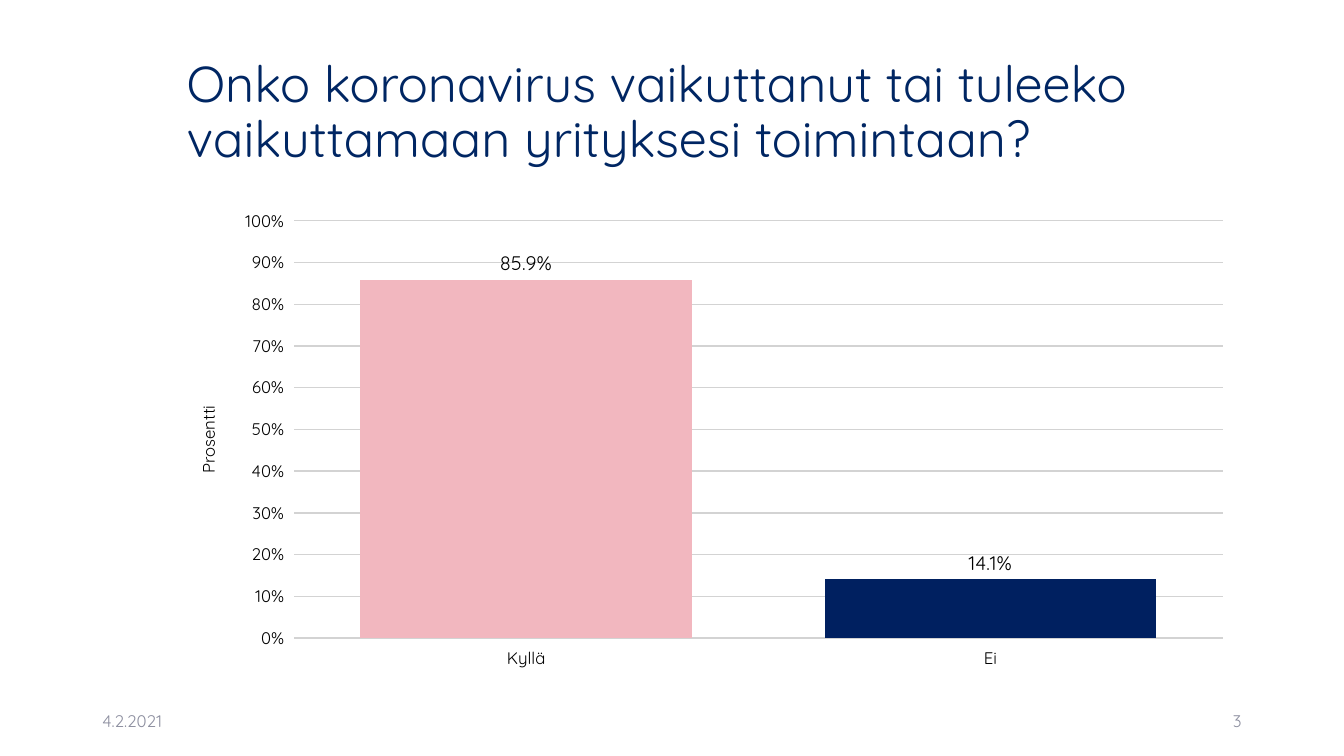
import pptx
import pptx.chart.data
import pptx.dml.color
import pptx.enum.chart
import pptx.enum.text
import pptx.oxml
import pptx.util

Cm = pptx.util.Cm
Color = pptx.dml.color.RGBColor.from_string
Align = pptx.enum.text.PP_ALIGN

theme = {
    "font": "Quicksand",
    "title": "002663", "footer": "8C8E9F", "text": "000000",
    "grid": "D3D3D3", "background": "FFFFFF", "series": "4682B4",
    "bars": ["F2B7BF", "002060"],
    "title_size": 36, "label_size": 14, "small_size": 12, "chart_size": 11,
}


def style_font(font, size, color):
    values = {"name": theme["font"], "size": pptx.util.Pt(size), "bold": False}
    for name, value in values.items():
        setattr(font, name, value)
    font.color.rgb = Color(theme[color])


def fill_box(box, text, size, color, align):
    frame = box.text_frame
    values = {
        "word_wrap": True,
        "auto_size": pptx.enum.text.MSO_AUTO_SIZE.NONE,
        "vertical_anchor": pptx.enum.text.MSO_ANCHOR.MIDDLE,
    }
    for name, value in values.items():
        setattr(frame, name, value)
    para = frame.paragraphs[0]
    para.alignment = align
    span = para.add_run()
    span.text = text
    style_font(span.font, size, color)
    return para


deck = pptx.Presentation()
deck.slide_width, deck.slide_height = Cm(33.87), Cm(19.05)
page = deck.slides.add_slide(deck.slide_layouts[5])
page.background.fill.solid()
page.background.fill.fore_color.rgb = Color(theme["background"])

title = page.shapes.title
title_place = {"left": 4.45, "top": 1.02, "width": 26.9, "height": 3.68}
for name, value in title_place.items():
    setattr(title, name, Cm(value))
title_para = fill_box(
    title,
    "Onko koronavirus vaikuttanut tai tuleeko vaikuttamaan yrityksesi toimintaan?",
    theme["title_size"], "title", Align.LEFT,
)
title_para.line_spacing = 0.9

for text, left, align in [("4.2.2021", 2.33, Align.LEFT), ("3", 23.92, Align.RIGHT)]:
    footer = page.shapes.add_textbox(Cm(left), Cm(17.66), Cm(7.62), Cm(1.01))
    fill_box(footer, text, theme["small_size"], "footer", align)

answers = pptx.chart.data.CategoryChartData()
answers.categories = ["Kyllä", "Ei"]
answers.add_series("Series 1", [0.859, 0.141])
chart = page.shapes.add_chart(
    pptx.enum.chart.XL_CHART_TYPE.COLUMN_CLUSTERED,
    Cm(4.45), Cm(5.08), Cm(26.9), Cm(12.09), answers,
).chart
chart.has_legend = False
chart.has_title = False
style_font(chart.font, theme["chart_size"], "text")

plot = chart.plots[0]
plot.gap_width = 40
plot.vary_by_categories = False
series = plot.series[0]
series.format.fill.solid()
series.format.fill.fore_color.rgb = Color(theme["series"])
for index, color in enumerate(theme["bars"]):
    fill = series.points[index].format.fill
    fill.solid()
    fill.fore_color.rgb = Color(color)

labels = series.data_labels
label_values = {
    "show_value": True,
    "number_format": "0.0%",
    "number_format_is_linked": False,
    "position": pptx.enum.chart.XL_LABEL_POSITION.OUTSIDE_END,
}
for name, value in label_values.items():
    setattr(labels, name, value)
style_font(labels.font, theme["label_size"], "text")

for axis in (chart.category_axis, chart.value_axis):
    axis.major_tick_mark = pptx.enum.chart.XL_TICK_MARK.OUTSIDE
    axis.format.line.fill.background()
    style_font(axis.tick_labels.font, theme["small_size"], "text")

percent_axis = chart.value_axis
axis_values = {
    "minimum_scale": 0, "maximum_scale": 1, "major_unit": 0.1,
    "has_major_gridlines": True,
}
for name, value in axis_values.items():
    setattr(percent_axis, name, value)
percent_axis.tick_labels.number_format = "0%"
percent_axis.tick_labels.number_format_is_linked = False
grid_line = percent_axis.major_gridlines.format.line
grid_line.color.rgb = Color(theme["grid"])
grid_line.width = pptx.util.Pt(1)

axis_para = percent_axis.axis_title.text_frame.paragraphs[0]
axis_span = axis_para.add_run()
axis_span.text = "Prosentti"
style_font(axis_span.font, theme["small_size"], "text")
body = percent_axis.axis_title.text_frame._txBody.bodyPr
body.set("rot", "-5400000")
body.set("vert", "horz")

plot_area = chart._chartSpace.chart.plotArea
for layout in plot_area.findall(pptx.oxml.ns.qn("c:layout")):
    plot_area.remove(layout)
places = {"x": 0.11, "y": 0.04, "w": 0.87, "h": 0.87}
place_xml = "".join(f'<c:{name} val="{value}"/>' for name, value in places.items())
plot_area.insert(0, pptx.oxml.parse_xml(
    f'<c:layout {pptx.oxml.ns.nsdecls("c")}><c:manualLayout>'
    '<c:layoutTarget val="inner"/><c:xMode val="edge"/><c:yMode val="edge"/>'
    f'{place_xml}</c:manualLayout></c:layout>'
))

deck.save("out.pptx")
